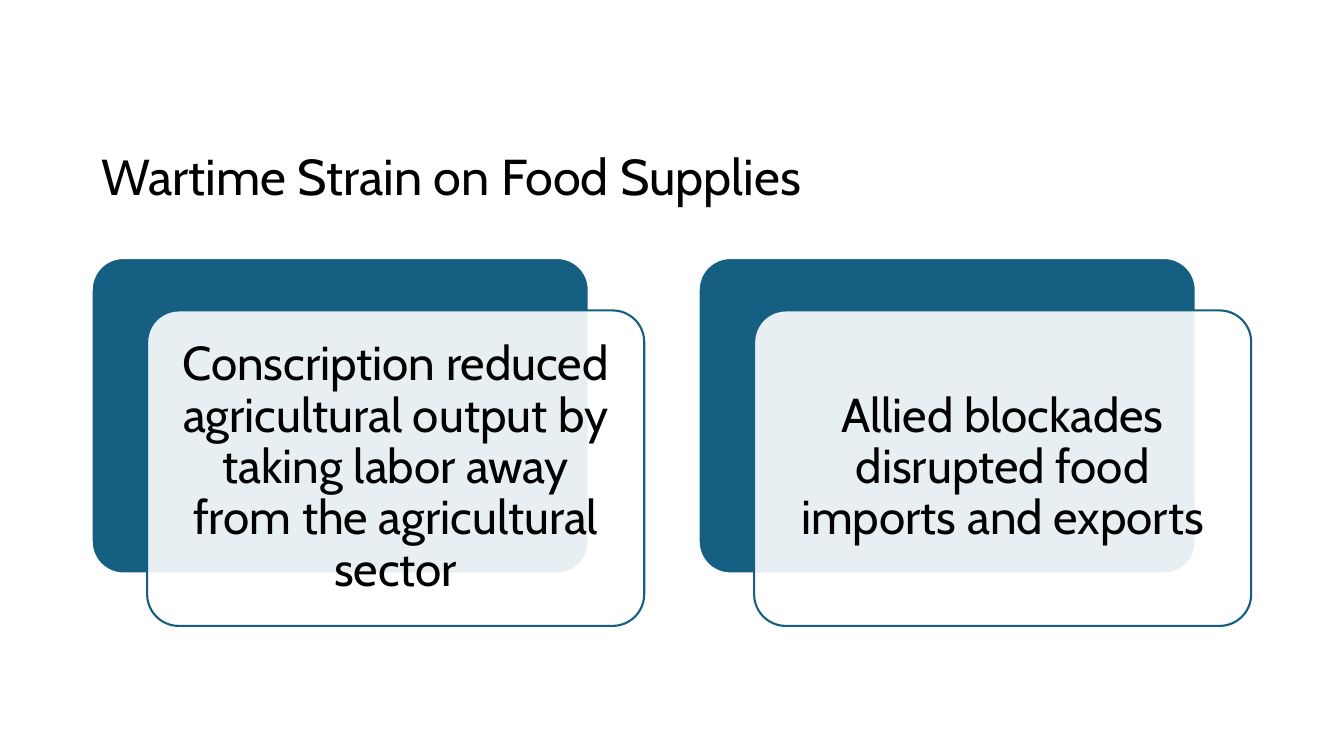
from dataclasses import dataclass

from lxml import etree
from pptx import Presentation
from pptx.dml.color import RGBColor
from pptx.enum.shapes import MSO_SHAPE
from pptx.enum.text import MSO_ANCHOR, PP_ALIGN
from pptx.oxml.ns import qn
from pptx.util import Inches, Pt

ROUNDED = MSO_SHAPE.ROUNDED_RECTANGLE
MIDDLE, BOTTOM = MSO_ANCHOR.MIDDLE, MSO_ANCHOR.BOTTOM
LEFT, CENTER = PP_ALIGN.LEFT, PP_ALIGN.CENTER


@dataclass(frozen=True)
class Theme:
    font: str = "Cabin"
    text: RGBColor = RGBColor(0x00, 0x00, 0x00)
    accent: RGBColor = RGBColor(0x15, 0x60, 0x82)
    paper: RGBColor = RGBColor(0xFF, 0xFF, 0xFF)
    title_size: Pt = Pt(36)
    card_size: Pt = Pt(34)
    outline: Pt = Pt(1.5)


theme = Theme()

CARD_WIDTH, CARD_HEIGHT = 4.93, 3.13
FIRST_LEFT, TOP = 0.91, 2.56
COLUMN_STEP = 6.02
OFFSET_X, OFFSET_Y = 0.55, 0.52
CARD_INSET = Inches(0.14)
MESSAGES = [
    "Conscription reduced agricultural output by taking labor away "
    "from the agricultural sector",
    "Allied blockades disrupted food imports and exports",
]


def add_panel(left, top, fill, line):
    panel = page.shapes.add_shape(
        ROUNDED, Inches(left), Inches(top), Inches(CARD_WIDTH), Inches(CARD_HEIGHT)
    )
    panel.adjustments[0] = 0.1
    panel.shadow.inherit = False
    panel.fill.solid()
    panel.fill.fore_color.rgb = fill
    panel.line.color.rgb = line
    panel.line.width = theme.outline
    return panel


def write_text(shape, text, size, anchor, align):
    frame = shape.text_frame
    frame.word_wrap = True
    frame.vertical_anchor = anchor
    para = frame.paragraphs[0]
    para.text = text
    para.alignment = align
    para.line_spacing = 0.9
    para.font.name = theme.font
    para.font.size = size
    para.font.color.rgb = theme.text
    return frame


deck = Presentation()
deck.slide_width, deck.slide_height = Inches(13.33), Inches(7.5)
page = deck.slides.add_slide(deck.slide_layouts[6])

title = page.shapes.add_textbox(Inches(0.91), Inches(1.87), Inches(11.5), Inches(0.23))
write_text(title, "Wartime Strain on Food Supplies", theme.title_size, BOTTOM, LEFT)

for column, message in enumerate(MESSAGES):
    left = FIRST_LEFT + column * COLUMN_STEP
    add_panel(left, TOP, theme.accent, theme.paper)
    card = add_panel(left + OFFSET_X, TOP + OFFSET_Y, theme.paper, theme.accent)
    card_color = card.fill._xPr.find(qn("a:solidFill"))[0]
    etree.SubElement(card_color, qn("a:alpha"), val="90000")
    frame = write_text(card, message, theme.card_size, MIDDLE, CENTER)
    frame.margin_left = frame.margin_right = CARD_INSET
    frame.margin_top = frame.margin_bottom = CARD_INSET

deck.save("out.pptx")
